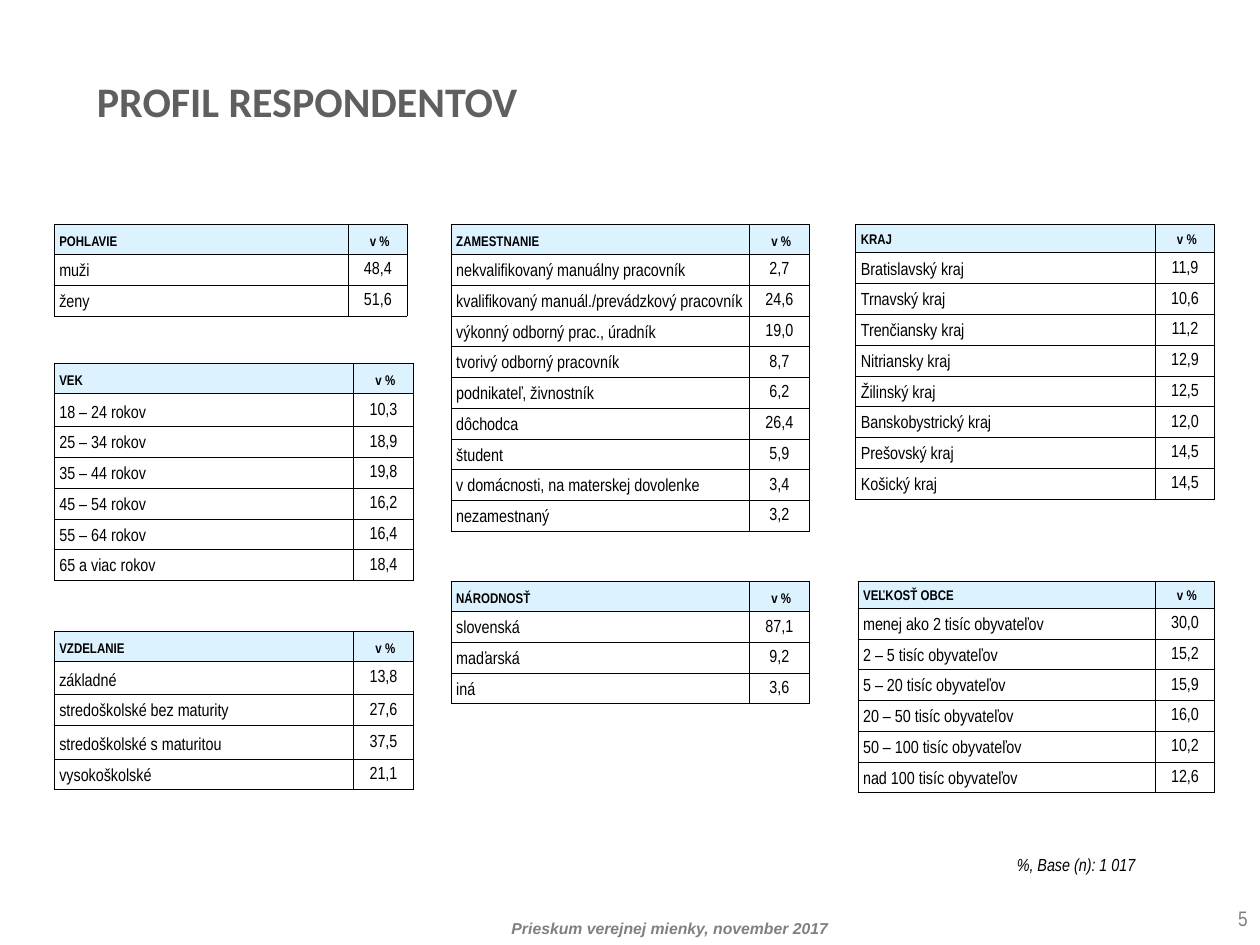
from dataclasses import dataclass

import lxml.etree
import pptx
import pptx.dml.color
import pptx.enum.text
import pptx.oxml.ns
import pptx.util

Pt = pptx.util.Pt
RGBColor = pptx.dml.color.RGBColor
Align = pptx.enum.text.PP_ALIGN
Anchor = pptx.enum.text.MSO_ANCHOR

BLACK = RGBColor(0x00, 0x00, 0x00)
GREY = RGBColor(0x80, 0x80, 0x80)
TITLE_GREY = RGBColor(0x5F, 0x5F, 0x5F)
HEADER_BLUE = RGBColor(0xDD, 0xF2, 0xFF)

LEFT, MIDDLE, RIGHT = 31, 257.8, 489  # left edges of the table columns
TOP, LOWER = 128.2, 332.3  # top edges of the table rows
ROW_HEIGHT = 17.6
TALL_ROW = 19.2
LABEL_MARGINS = (2.9, 2.9, 0.7, 2.9)  # left, top, right, bottom
VALUE_MARGINS = (5, 0, 5, 0)


@dataclass
class ProfileTable:
    heading: str
    left: float
    top: float
    rows: list[tuple[str, str]]
    label_width: float = 170.6
    value_width: float = 33.9
    header_height: float = 17.2
    tall_rows: tuple[int, ...] = ()


TABLES = [
    ProfileTable("POHLAVIE", LEFT, TOP, [("muži", "48,4"), ("ženy", "51,6")],
                 label_width=168.2, value_width=33.4),
    ProfileTable("VEK", LEFT, 207.5, [
        ("18 – 24 rokov", "10,3"), ("25 – 34 rokov", "18,9"),
        ("35 – 44 rokov", "19,8"), ("45 – 54 rokov", "16,2"),
        ("55 – 64 rokov", "16,4"), ("65 a viac rokov", "18,4"),
    ], label_width=171.2, tall_rows=(1,)),
    ProfileTable("VZDELANIE", LEFT, 360.6, [
        ("základné", "13,8"), ("stredoškolské bez maturity", "27,6"),
        ("stredoškolské s maturitou", "37,5"), ("vysokoškolské", "21,1"),
    ], label_width=171.2, tall_rows=(1, 3)),
    ProfileTable("ZAMESTNANIE", MIDDLE, TOP, [
        ("nekvalifikovaný manuálny pracovník", "2,7"),
        ("kvalifikovaný manuál./prevádzkový pracovník", "24,6"),
        ("výkonný odborný prac., úradník", "19,0"),
        ("tvorivý odborný pracovník", "8,7"),
        ("podnikateľ, živnostník", "6,2"),
        ("dôchodca", "26,4"),
        ("študent", "5,9"),
        ("v domácnosti, na materskej dovolenke", "3,4"),
        ("nezamestnaný", "3,2"),
    ]),
    ProfileTable("NÁRODNOSŤ", MIDDLE, LOWER, [
        ("slovenská", "87,1"), ("maďarská", "9,2"), ("iná", "3,6"),
    ]),
    ProfileTable("KRAJ", RIGHT, TOP, [
        ("Bratislavský kraj", "11,9"), ("Trnavský kraj", "10,6"),
        ("Trenčiansky kraj", "11,2"), ("Nitriansky kraj", "12,9"),
        ("Žilinský kraj", "12,5"), ("Banskobystrický kraj", "12,0"),
        ("Prešovský kraj", "14,5"), ("Košický kraj", "14,5"),
    ], label_width=171.2, header_height=16.3),
    ProfileTable("VEĽKOSŤ OBCE", RIGHT + 1.3, LOWER, [
        ("menej ako 2 tisíc obyvateľov", "30,0"),
        ("2 – 5 tisíc obyvateľov", "15,2"),
        ("5 – 20 tisíc obyvateľov", "15,9"),
        ("20 – 50 tisíc obyvateľov", "16,0"),
        ("50 – 100 tisíc obyvateľov", "10,2"),
        ("nad 100 tisíc obyvateľov", "12,6"),
    ], label_width=169.9, header_height=15.3),
]


def write_text(text_frame, text: str, *, size: float, font: str = "Arial Narrow",
               color: RGBColor = BLACK, bold: bool = False, italic: bool = False,
               align=Align.LEFT, line_spacing: float = 1.0) -> None:
    paragraph = text_frame.paragraphs[0]
    paragraph.alignment = align
    paragraph.line_spacing = line_spacing
    run = paragraph.add_run()
    run.text = text
    run.font.name = font
    run.font.size = Pt(size)
    run.font.bold = bold
    run.font.italic = italic
    run.font.color.rgb = color


def add_text_box(slide, box: tuple, text: str, *, wrap: bool = True,
                 anchor=Anchor.TOP, **text_format) -> None:
    shape = slide.shapes.add_textbox(*map(Pt, box))
    shape.text_frame.word_wrap = wrap
    shape.text_frame.vertical_anchor = anchor
    write_text(shape.text_frame, text, **text_format)


def add_borders(cell) -> None:
    qn = pptx.oxml.ns.qn
    properties = cell._tc.get_or_add_tcPr()
    for side in ("a:lnL", "a:lnR", "a:lnT", "a:lnB"):
        line = lxml.etree.SubElement(properties, qn(side), w=str(Pt(0.5)))
        fill = lxml.etree.SubElement(line, qn("a:solidFill"))
        lxml.etree.SubElement(fill, qn("a:srgbClr"), val=str(BLACK))


def format_cell(cell, text: str, *, header: bool, value: bool) -> None:
    body_value = value and not header
    margins = VALUE_MARGINS if body_value else LABEL_MARGINS
    (cell.margin_left, cell.margin_top,
     cell.margin_right, cell.margin_bottom) = map(Pt, margins)
    cell.vertical_anchor = Anchor.MIDDLE if body_value else Anchor.BOTTOM
    add_borders(cell)
    if header:
        cell.fill.solid()
        cell.fill.fore_color.rgb = HEADER_BLUE
    else:
        cell.fill.background()
    write_text(cell.text_frame, text, size=8 if header else 10, bold=header,
               align=Align.CENTER if value else Align.LEFT,
               line_spacing=1.07 if body_value else 1.0)


def add_profile_table(slide, profile: ProfileTable) -> None:
    rows = [(profile.heading, "v %"), *profile.rows]
    heights = [profile.header_height] + [
        TALL_ROW if index in profile.tall_rows else ROW_HEIGHT
        for index in range(1, len(rows))]
    widths = (profile.label_width, profile.value_width)
    table = slide.shapes.add_table(
        len(rows), 2, Pt(profile.left), Pt(profile.top),
        Pt(sum(widths)), Pt(sum(heights))).table
    table.first_row = False
    table.horz_banding = False
    for column, width in zip(table.columns, widths):
        column.width = Pt(width)
    for row_index, (texts, height) in enumerate(zip(rows, heights)):
        table.rows[row_index].height = Pt(height)
        for column_index, text in enumerate(texts):
            format_cell(table.cell(row_index, column_index), text,
                        header=row_index == 0, value=column_index == 1)


def main() -> None:
    presentation = pptx.Presentation()
    presentation.slide_width, presentation.slide_height = Pt(720), Pt(540)
    slide = presentation.slides.add_slide(presentation.slide_layouts[5])

    # Title
    title = slide.shapes.title
    title.left, title.top, title.width, title.height = map(Pt, (48.2, 34.6, 510.5, 45.4))
    title.text_frame.vertical_anchor = Anchor.MIDDLE
    title.text_frame.auto_size = pptx.enum.text.MSO_AUTO_SIZE.NONE
    write_text(title.text_frame, "PROFIL RESPONDENTOV", size=24, font="Calibri",
               color=TITLE_GREY, bold=True)

    # Respondent tables
    for profile in TABLES:
        add_profile_table(slide, profile)

    # Base note, footer and page number
    add_text_box(slide, (535.7, 485.3, 158.4, 17.3), "%, Base (n): 1 017", wrap=False,
                 anchor=Anchor.MIDDLE, size=10, italic=True, align=Align.CENTER)
    add_text_box(slide, (223.9, 521.3, 317.5, 18.7),
                 "Prieskum verejnej mienky, november 2017", size=9, font="Arial",
                 color=GREY, bold=True, italic=True, align=Align.CENTER)
    add_text_box(slide, (591.8, 514.1, 128.2, 25.9), "5", size=12, color=GREY,
                 align=Align.RIGHT)

    presentation.save("out.pptx")


if __name__ == "__main__":
    main()
